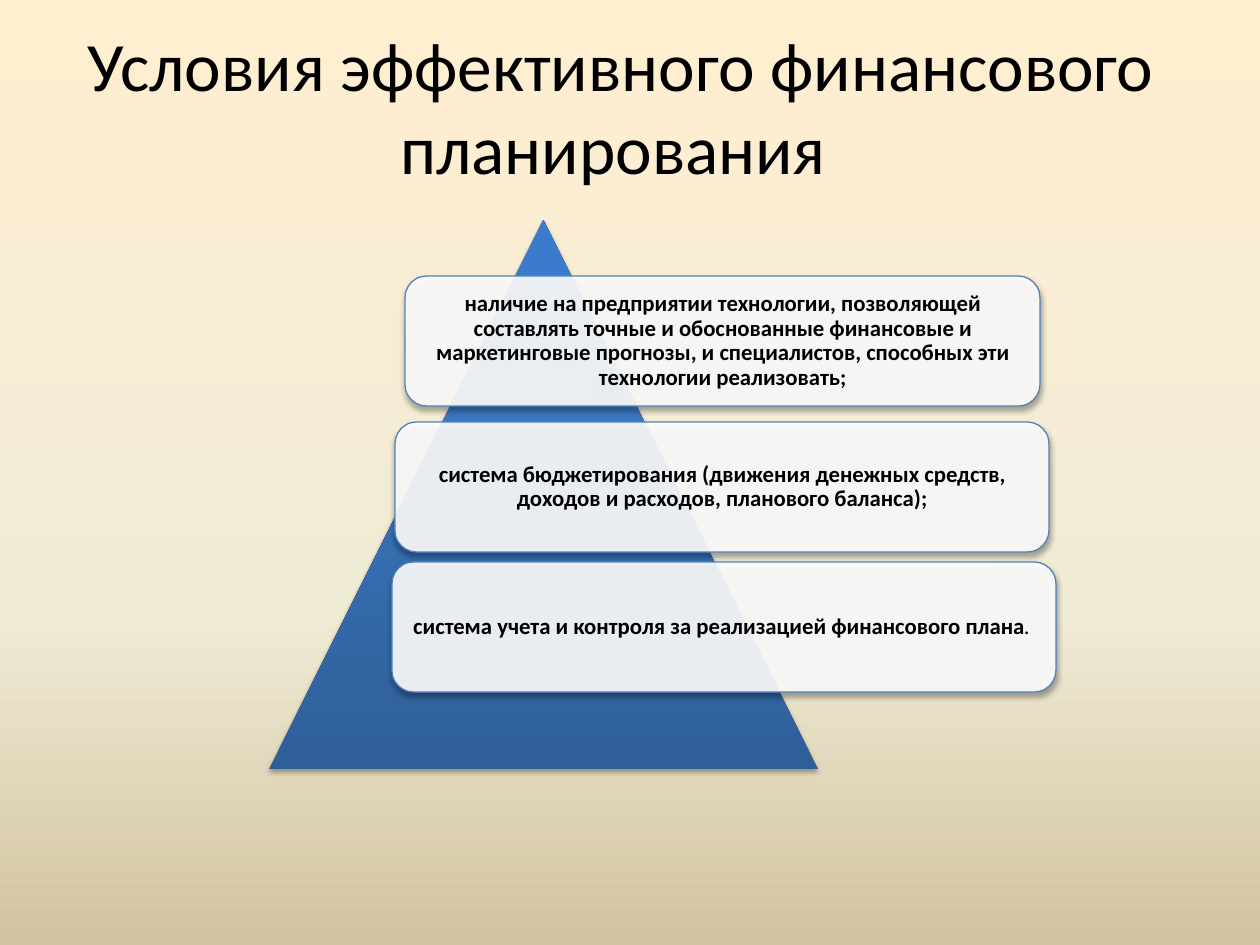
"""Build the slide on the conditions of effective financial planning."""
from dataclasses import dataclass

from lxml import etree
from pptx import Presentation
from pptx.dml.color import RGBColor
from pptx.enum.shapes import MSO_SHAPE
from pptx.enum.text import MSO_ANCHOR, MSO_AUTO_SIZE, PP_ALIGN
from pptx.oxml.ns import qn
from pptx.util import Emu, Pt

TRIANGLE = MSO_SHAPE.ISOSCELES_TRIANGLE
ROUNDED = MSO_SHAPE.ROUNDED_RECTANGLE
MIDDLE = MSO_ANCHOR.MIDDLE
CENTER = PP_ALIGN.CENTER
NO_FIT = MSO_AUTO_SIZE.NONE
PX_PER_INCH = 126

Stops = tuple[tuple[int, str], ...]


@dataclass(frozen=True)
class Theme:
    font: str = "Calibri"
    title_size: float = 39.6
    body_size: float = 13
    text: str = "000000"
    card: str = "FFFFFF"
    card_opacity: int = 90
    outline: str = "4F81BD"
    shadow: str = "000000"
    shadow_opacity: int = 35
    backdrop: Stops = ((0, "FFEFD1"), (65, "F0EBD5"), (100, "D1C39F"))
    pyramid: Stops = ((0, "2F5F99"), (80, "3D7CC7"), (100, "3A7CCB"))


@dataclass(frozen=True)
class Frame:
    left: int
    top: int
    width: int
    height: int

    def emu(self) -> tuple[Emu, ...]:
        return tuple(px(n) for n in (self.left, self.top, self.width, self.height))


@dataclass(frozen=True)
class Card:
    frame: Frame
    text: str
    ending: str = ""


THEME = Theme()
TITLE = "Условия эффективного финансового планирования "
TITLE_FRAME = Frame(54, 26, 1134, 158)
PYRAMID_FRAME = Frame(269, 220, 549, 549)
CARDS = (
    Card(
        Frame(405, 276, 635, 130),
        "наличие на предприятии технологии, позволяющей составлять точные и "
        "обоснованные финансовые и маркетинговые прогнозы, и специалистов, "
        "способных эти технологии реализовать;",
    ),
    Card(
        Frame(395, 422, 654, 130),
        "система бюджетирования (движения денежных средств, доходов и расходов, "
        "планового баланса);",
    ),
    Card(
        Frame(392, 562, 664, 130),
        "система учета и контроля за реализацией финансового плана",
        ". ",
    ),
)


def px(length: int) -> Emu:
    return Emu(round(length * 914400 / PX_PER_INCH))


def add_color(parent, color: str, opacity: int = 100) -> None:
    node = etree.SubElement(parent, qn("a:srgbClr"), val=color)
    if opacity < 100:
        etree.SubElement(node, qn("a:alpha"), val=str(opacity * 1000))


def set_gradient(owner, fill, stops: Stops, angle: int) -> None:
    fill.gradient()
    gradient = next(owner.iter(qn("a:gradFill")))
    stop_list = gradient.find(qn("a:gsLst"))
    for old_stop in list(stop_list):
        stop_list.remove(old_stop)
    for position, color in stops:
        stop = etree.SubElement(stop_list, qn("a:gs"), pos=str(position * 1000))
        add_color(stop, color)
    gradient.find(qn("a:lin")).set("ang", str(angle * 60000))


def set_shadow(shape) -> None:
    shape.shadow.inherit = False
    effects = shape._element.spPr.find(qn("a:effectLst"))
    shadow = etree.SubElement(
        effects, qn("a:outerShdw"), blurRad=str(Pt(3.1)), dist=str(Pt(1.8)),
        dir="5400000", rotWithShape="0",
    )
    add_color(shadow, THEME.shadow, THEME.shadow_opacity)


def style_span(span, size: float, bold: bool) -> None:
    span.font.name = THEME.font
    span.font.size = Pt(size)
    span.font.bold = bold
    span.font.color.rgb = RGBColor.from_string(THEME.text)


def draw_title(page) -> None:
    title = page.shapes.title
    title.left, title.top, title.width, title.height = TITLE_FRAME.emu()
    title.text_frame.text = TITLE
    title.text_frame.auto_size = NO_FIT
    title.text_frame.vertical_anchor = MIDDLE
    para = title.text_frame.paragraphs[0]
    para.alignment = CENTER
    style_span(para.runs[0], THEME.title_size, False)


def draw_pyramid(page) -> None:
    pyramid = page.shapes.add_shape(TRIANGLE, *PYRAMID_FRAME.emu())
    set_gradient(pyramid._element.spPr, pyramid.fill, THEME.pyramid, 270)
    pyramid.line.fill.background()
    set_shadow(pyramid)


def draw_card(page, card: Card) -> None:
    box = page.shapes.add_shape(ROUNDED, *card.frame.emu())
    box.fill.solid()
    box.fill.fore_color.rgb = RGBColor.from_string(THEME.card)
    color = box._element.spPr.find(qn("a:solidFill")).find(qn("a:srgbClr"))
    etree.SubElement(color, qn("a:alpha"), val=str(THEME.card_opacity * 1000))
    box.line.color.rgb = RGBColor.from_string(THEME.outline)
    box.line.width = Pt(0.75)
    set_shadow(box)

    frame = box.text_frame
    frame.word_wrap = True
    frame.vertical_anchor = MIDDLE
    frame.margin_left = frame.margin_right = px(6)
    frame.margin_top = frame.margin_bottom = px(6)
    frame.text = card.text
    para = frame.paragraphs[0]
    para.alignment = CENTER
    para.line_spacing = 0.9
    style_span(para.runs[0], THEME.body_size, True)
    if card.ending:
        span = para.add_run()
        span.text = card.ending
        style_span(span, THEME.body_size, False)


def main() -> None:
    deck = Presentation()
    deck.slide_width, deck.slide_height = px(1260), px(945)
    page = deck.slides.add_slide(deck.slide_layouts.get_by_name("Title Only"))
    set_gradient(page._element, page.background.fill, THEME.backdrop, 90)
    draw_title(page)
    draw_pyramid(page)
    for card in CARDS:
        draw_card(page, card)
    deck.save("out.pptx")


if __name__ == "__main__":
    main()
